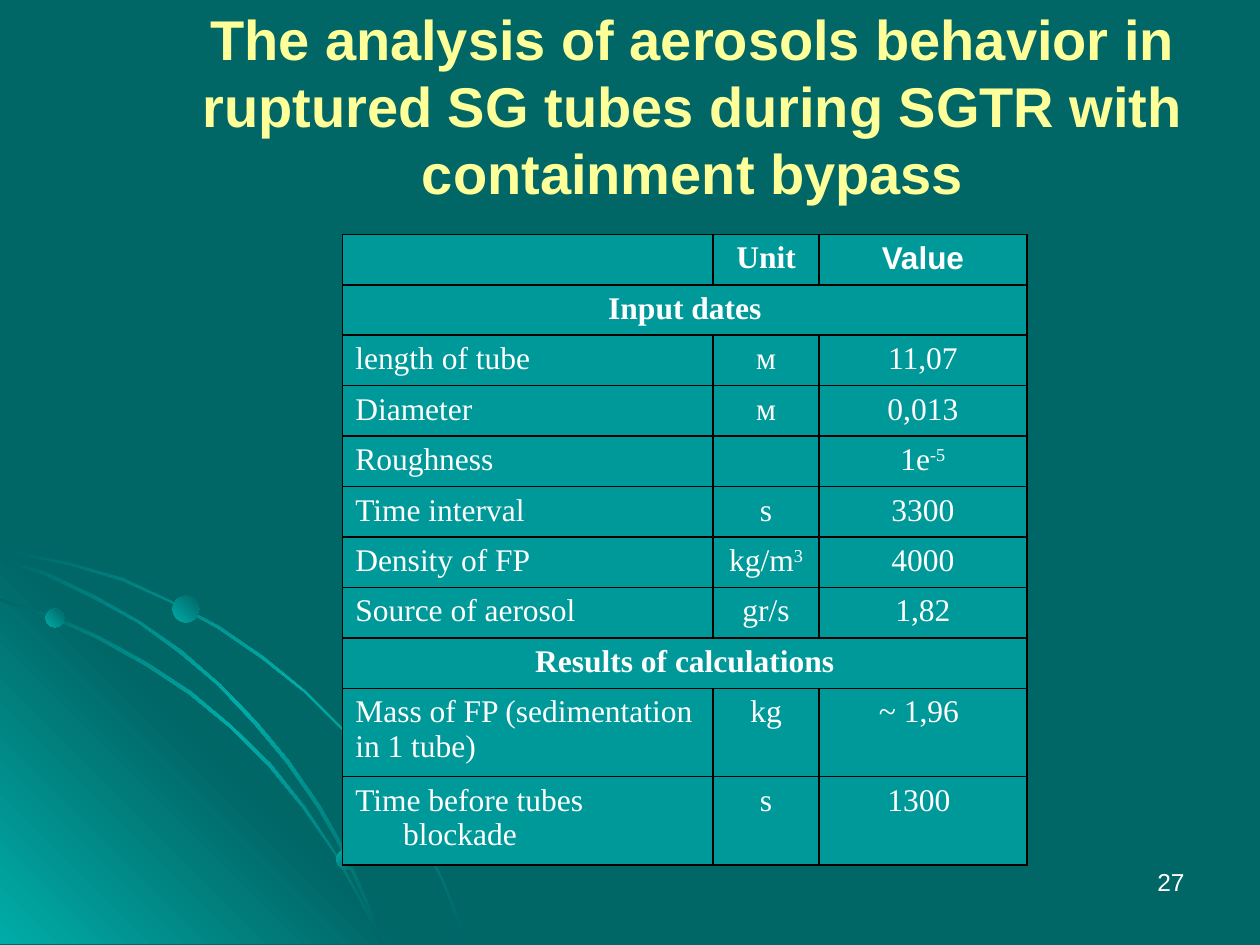
from dataclasses import dataclass

from lxml.etree import SubElement
from pptx import Presentation
from pptx.dml.color import RGBColor as RGB
from pptx.enum.shapes import MSO_SHAPE as Shape
from pptx.enum.text import MSO_ANCHOR as Anchor, PP_ALIGN as Align
from pptx.oxml import parse_xml
from pptx.oxml.ns import nsdecls, qn
from pptx.util import Inches, Pt


@dataclass(frozen=True)
class Theme:
    back: str = "006666"
    glow: str = "00ACA8"
    cell: str = "009999"
    rule: str = "000000"
    text: str = "FFFFFF"
    head: str = "FFFF99"
    sans: str = "Arial"
    serif: str = "Times New Roman"
    big: int = 32
    body: int = 18
    small: int = 14


T = Theme()
WIDE, HIGH = 10, 7.5
UNIT = Inches(0.01)  # ornament grid step
HANG = 0.38

# Each strand is an upper edge running out and a lower edge running back
STRANDS = [
    [(0, 8), (28, 14), (57, 20), (98, 32), (136, 50), (174, 70), (209, 94),
     (242, 121), (272, 151), (300, 184), (325, 221), (339, 246), (352, 271),
     (362, 296), (372, 322), (370, 322), (360, 296), (350, 271), (337, 246),
     (323, 222), (298, 185), (271, 152), (241, 122), (208, 96), (173, 72),
     (135, 51), (97, 34), (56, 22), (28, 16), (0, 11)],
    [(0, 48), (41, 61), (79, 78), (117, 99), (152, 122), (184, 149),
     (215, 179), (242, 213), (266, 249), (286, 285), (296, 303), (303, 322),
     (301, 322), (294, 305), (285, 287), (265, 250), (240, 214), (213, 181),
     (183, 151), (150, 124), (115, 101), (77, 80), (39, 63), (0, 50)],
    [(0, 15), (39, 28), (76, 46), (111, 66), (144, 89), (175, 116),
     (204, 146), (229, 176), (254, 212), (269, 238), (282, 266), (294, 293),
     (303, 322), (301, 322), (292, 295), (280, 267), (267, 240), (252, 214),
     (227, 178), (202, 148), (173, 117), (142, 91), (109, 67), (74, 48),
     (36, 30), (0, 17)],
]
WEDGE = [(0, 0), (322, 322), (0, 322)]
BEADS = [(36, 56, 15, 315), (267, 247, 16, 45), (137, 46, 21, 315)]

# Label, unit, value, hanging indent; "^" starts a superscript
HEAD = ("", "Unit", "Value", False)
ROWS = [
    HEAD,
    ("Input dates",),
    ("length of tube", "м", "11,07", True),
    ("Diameter", "м", "0,013", True),
    ("Roughness", "", "1е^-5", True),
    ("Time interval", "s", "3300", True),
    ("Density of FP", "kg/m^3", "4000", False),
    ("Source of aerosol", "gr/s", "1,82", False),
    ("Results of calculations",),
    ("Mass of FP (sedimentation in 1 tube)", "kg", "~ 1,96 ", False),
    ("Time before tubes blockade", "s", "1300 ", True),
]
COLS = (2.94, 0.84, 1.65)
LINE, TALL = 0.38, 0.65  # one-line and two-line row heights


def style(para, size, color, face=T.sans, bold=False, align=Align.CENTER):
    para.alignment = align
    font = para.font
    font.size, font.name, font.bold = Pt(size), face, bold
    font.color.rgb = RGB.from_string(color)


def shade(shape, colors, angle):
    """Fill with evenly spaced colours; the angle turns clockwise."""
    shape.shadow.inherit = False
    shape.line.fill.background()
    step = 100000 // (len(colors) - 1)
    stops = "".join(
        f'<a:gs pos="{i * step}"><a:srgbClr val="{c}"/></a:gs>'
        for i, c in enumerate(colors))
    grad = parse_xml(
        f'<a:gradFill {nsdecls("a")} rotWithShape="1"><a:gsLst>{stops}</a:gsLst>'
        f'<a:lin ang="{angle * 60000}" scaled="1"/></a:gradFill>')
    props = shape.element.spPr
    props.insert(props.index(props.find(qn("a:ln"))), grad)


def add_swirl(slide, left, top):
    """Corner ornament: strands, a glowing wedge and beads."""
    x, y = Inches(left), Inches(top)
    dim = (T.back, T.glow, T.back)
    lit = (T.glow, T.back, T.glow)
    parts = [(pts, dim, 45) for pts in STRANDS]
    parts.insert(1, (WEDGE, lit, 315))
    for pts, colors, angle in parts:
        pen = slide.shapes.build_freeform(*pts[0], scale=UNIT)
        pen.add_line_segments(pts[1:], close=True)
        shade(pen.convert_to_shape(x, y), colors, angle)
    for dx, dy, size, angle in BEADS:
        bead = slide.shapes.add_shape(
            Shape.OVAL, x + dx * UNIT, y + dy * UNIT, size * UNIT, size * UNIT)
        shade(bead, (T.glow, T.back), angle)


def add_title(slide, left, top, width, height):
    title = slide.shapes.title
    title.left, title.top = Inches(left), Inches(top)
    title.width, title.height = Inches(width), Inches(height)
    frame = title.text_frame
    frame.word_wrap, frame.vertical_anchor = True, Anchor.MIDDLE
    frame.text = ("The analysis of aerosols behavior in ruptured SG tubes "
                  "during SGTR with containment bypass")
    style(frame.paragraphs[0], T.big, T.head, bold=True)


def set_edges(cell):
    props = cell._tc.get_or_add_tcPr()
    for i, side in enumerate(("lnL", "lnR", "lnT", "lnB")):
        line = parse_xml(f'<a:{side} {nsdecls("a")} w="{Pt(1)}"/>')
        fill = SubElement(line, qn("a:solidFill"))
        SubElement(fill, qn("a:srgbClr"), val=T.rule)
        props.insert(i, line)


def fill_cell(cell, text, face, bold, align, hang):
    para = cell.text_frame.paragraphs[0]
    base, _, power = text.partition("^")
    if base:
        para.add_run().text = base
    if power:
        run = para.add_run()
        run.text = power
        run.font._element.set("baseline", "30000")
    if hang and text:
        props = para._p.get_or_add_pPr()
        props.set("marL", str(Inches(HANG)))
        props.set("indent", str(-Inches(HANG)))
    style(para, T.body, T.text, face, bold, align)


def add_data(slide, left, top):
    """Table of inputs and results, with section rows across all columns."""
    highs = [LINE] * (len(ROWS) - 2) + [TALL] * 2
    table = slide.shapes.add_table(
        len(ROWS), len(COLS), Inches(left), Inches(top),
        Inches(sum(COLS)), Inches(sum(highs))).table
    table.first_row = table.horz_banding = False
    for col, width in zip(table.columns, COLS):
        col.width = Inches(width)
    for r, (row, high) in enumerate(zip(ROWS, highs)):
        table.rows[r].height = Inches(high)
        for c in range(len(COLS)):
            cell = table.cell(r, c)
            cell.fill.solid()
            cell.fill.fore_color.rgb = RGB.from_string(T.cell)
            set_edges(cell)
        if len(row) == 1:
            table.cell(r, 0).merge(table.cell(r, len(COLS) - 1))
            fill_cell(table.cell(r, 0), row[0], T.serif, True, Align.CENTER, False)
            continue
        *texts, hang = row
        for c, text in enumerate(texts):
            face = T.sans if row is HEAD and c == 2 else T.serif
            align = Align.CENTER if c else Align.LEFT
            fill_cell(table.cell(r, c), text, face, row is HEAD, align, hang)


def add_page(slide, left, top, width, height):
    box = slide.shapes.add_textbox(*map(Inches, (left, top, width, height)))
    box.text_frame.word_wrap = True
    box.text_frame.text = "27"
    style(box.text_frame.paragraphs[0], T.small, T.text, align=Align.RIGHT)


def main():
    deck = Presentation()
    deck.slide_width, deck.slide_height = Inches(WIDE), Inches(HIGH)
    slide = deck.slides.add_slide(deck.slide_layouts[5])
    back = slide.background.fill
    back.solid()
    back.fore_color.rgb = RGB.from_string(T.back)
    add_swirl(slide, 0, HIGH - 3.23)
    add_page(slide, WIDE - 2.83, HIGH - 0.67, 2.33, 0.5)
    add_title(slide, 0.1 * WIDE, 0.21, 0.9 * WIDE, 1.25)
    add_data(slide, 2.72, 1.86)
    deck.save("out.pptx")


if __name__ == "__main__":
    main()
